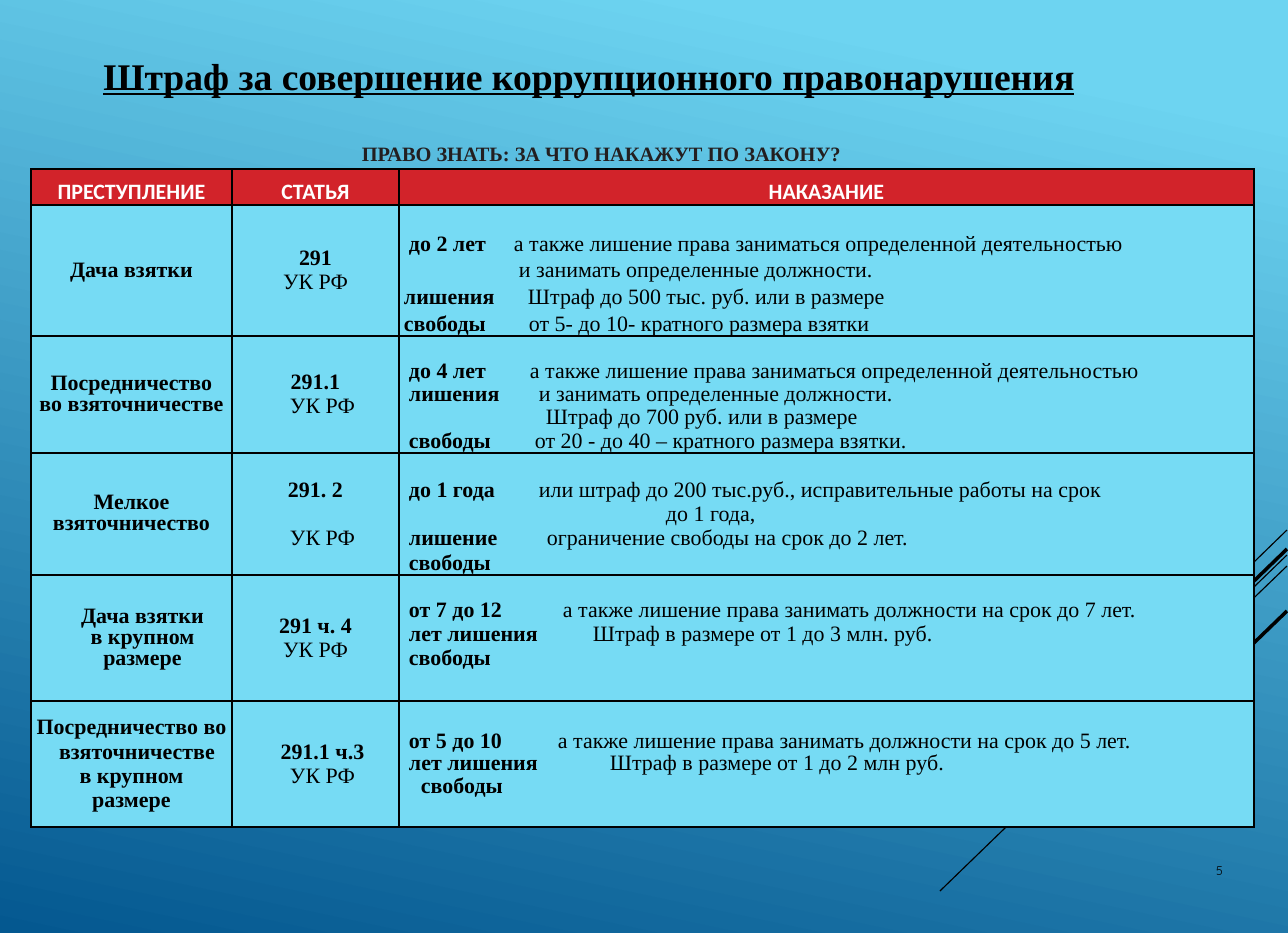
from dataclasses import dataclass
from typing import Any

from lxml.etree import SubElement
from pptx import Presentation
from pptx.dml.color import RGBColor
from pptx.enum.shapes import MSO_CONNECTOR
from pptx.enum.text import MSO_ANCHOR as Anchor, PP_ALIGN as Align
from pptx.oxml.ns import qn
from pptx.util import Emu, Pt

PX = 914400 / 112.8


def px(length: int) -> Emu:
    return Emu(round(length * PX))


@dataclass(frozen=True)
class Theme:
    serif: str = "Times New Roman"
    sans: str = "Calibri"
    number_font: str = "Quicksand"
    ink: str = "000000"
    subtitle: str = "231F20"
    white: str = "FFFFFF"
    header: str = "D2232A"
    cell: str = "76DBF4"
    sky_light: str = "6DD4F1"
    sky_dark: str = "045890"
    title_size: int = 24
    subtitle_size: int = 13
    table_size: int = 14
    number_size: int = 8
    border: float = 1


THEME = Theme()


@dataclass(frozen=True)
class Line:
    """Bold term and plain detail; indent, gap before and tab stops are in px."""
    term: str = ""
    detail: str = ""
    indent: int = 0
    before: int = 0
    stops: tuple[int, ...] = ()


@dataclass(frozen=True)
class Block:
    lines: tuple[Line, ...]
    spacing: float = 1.0
    anchor: Anchor = Anchor.MIDDLE


@dataclass(frozen=True)
class Ray:
    start: tuple[int, int]
    end: tuple[int, int]
    width: float


def centred(*lines: Line, spacing: float = 1.0) -> Block:
    return Block(lines, spacing)


def article(number: str, number_indent: int = 0, code_indent: int = 0, gap: int = 0) -> Block:
    return centred(Line(number, indent=number_indent),
                   Line(detail="УК РФ", indent=code_indent, before=gap))


def punishment(*rows: tuple[str, str, int, int], spacing: float = 1.0,
               anchor: Anchor = Anchor.BOTTOM) -> Block:
    """Each row holds term, detail and the px offsets of both from the cell edge."""
    lines = []
    for term, detail, term_at, detail_at in rows:
        stops = (term_at,) * bool(term) + (detail_at,) * bool(detail)
        lines.append(Line(term, detail, stops=stops))
    return Block(tuple(lines), spacing, anchor)


RAYS = (
    Ray((1287, 530), (1181, 633), 0.75),
    Ray((1287, 555), (940, 891), 0.75),
    Ray((1287, 566), (1066, 779), 0.75),
    Ray((1287, 549), (1084, 746), 2.25),
    Ray((1287, 611), (1139, 754), 2.25),
)
HEADERS = ("ПРЕСТУПЛЕНИЕ", "СТАТЬЯ", "НАКАЗАНИЕ")
COLUMN_WIDTHS = (201, 167, 855)
ROW_HEIGHTS = (36, 131, 117, 122, 126, 126)
TOP_MARGIN = 23
OFFENCES = (
    (centred(Line("Дача взятки")), article("291"), punishment(
        ("до 2 лет", "а также лишение права заниматься определенной деятельностью", 10, 115),
        ("", "и занимать определенные должности.", 10, 120),
        ("лишения", "Штраф до 500 тыс. руб. или в размере", 5, 129),
        ("свободы", "от 5- до 10- кратного размера взятки", 5, 130), spacing=1.1)),
    (centred(Line("Посредничество"), Line("во взяточничестве"), spacing=0.87),
     article("291.1", code_indent=14), punishment(
        ("до 4 лет", "а также лишение права заниматься определенной деятельностью", 10, 131),
        ("лишения", "и занимать определенные должности.", 10, 140),
        ("", "Штраф до 700 руб. или в размере", 10, 147),
        ("свободы", "от 20 - до 40 – кратного размера взятки.", 10, 136), spacing=0.96)),
    (centred(Line("Мелкое взяточничество"), spacing=0.87),
     article("291. 2", code_indent=14, gap=24), punishment(
        ("до 1 года", "или штраф до 200 тыс.руб., исправительные работы на срок", 10, 140),
        ("", "до 1 года,", 10, 267),
        ("лишение", "ограничение свободы на срок до 2 лет.", 10, 148),
        ("свободы", "", 10, 0))),
    (centred(*(Line(text, indent=22) for text in ("Дача взятки", "в крупном", "размере")), spacing=0.87),
     article("291 ч. 4"), punishment(
        ("от 7 до 12", "а также лишение права занимать должности на срок до 7 лет.", 10, 164),
        ("лет лишения", "Штраф в размере от 1 до 3 млн. руб.", 10, 194),
        ("свободы", "", 10, 0), anchor=Anchor.TOP)),
    (centred(Line("Посредничество во"), Line("взяточничестве", indent=11), Line("в крупном"), Line("размере")),
     article("291.1 ч.3", 14, 14), punishment(
        ("от 5 до 10", "а также лишение права занимать должности на срок до 5 лет.", 10, 159),
        ("лет лишения", "Штраф в размере от 1 до 2 млн руб.", 10, 211),
        ("свободы", "", 22, 0), spacing=0.93, anchor=Anchor.MIDDLE)),
)


def set_all(target: Any, values: dict[str, Any]) -> None:
    for name, value in values.items():
        setattr(target, name, value)


def add_span(para: Any, text: str, size: int, font: str = THEME.serif, color: str = THEME.ink,
             **formats: Any) -> None:
    span = para.add_run()
    span.text = text
    set_all(span.font, {"name": font, "size": Pt(size), "bold": False, **formats})
    span.font.color.rgb = RGBColor.from_string(color)


def place(box: Any, left: int, top: int, width: int, height: int) -> None:
    set_all(box, {"left": px(left), "top": px(top), "width": px(width), "height": px(height)})


def paint_background(page: Any) -> None:
    fill = page.background.fill
    fill.gradient()
    fill.gradient_angle = 258
    for stop, position, color in zip(fill.gradient_stops, (0.1, 1), (THEME.sky_light, THEME.sky_dark)):
        stop.position = position
        stop.color.rgb = RGBColor.from_string(color)


def add_ray(page: Any, ray: Ray) -> None:
    line = page.shapes.add_connector(MSO_CONNECTOR.STRAIGHT, *map(px, ray.start + ray.end))
    line.line.color.rgb = RGBColor.from_string(THEME.ink)
    line.line.width = Pt(ray.width)
    SubElement(line._element.spPr, qn("a:effectLst"))


def style_cell(cell: Any, color: str, anchor: Anchor) -> None:
    top = TOP_MARGIN if anchor == Anchor.TOP else 0
    set_all(cell, {"margin_left": 0, "margin_right": 0, "margin_top": px(top), "margin_bottom": 0,
                   "vertical_anchor": anchor})
    properties = cell._tc.get_or_add_tcPr()
    for side in ("lnL", "lnR", "lnT", "lnB"):
        edge = SubElement(properties, qn(f"a:{side}"), w=str(Pt(THEME.border)))
        SubElement(SubElement(edge, qn("a:solidFill")), qn("a:srgbClr"), val=THEME.ink)
    cell.fill.solid()
    cell.fill.fore_color.rgb = RGBColor.from_string(color)


def write_line(para: Any, line: Line, spacing: float) -> None:
    set_all(para, {"alignment": Align.LEFT if line.stops else Align.CENTER,
                   "line_spacing": spacing, "space_before": px(line.before)})
    properties = para._p.get_or_add_pPr()
    properties.set("marL", str(px(line.indent)))
    if line.stops:
        tabs = SubElement(properties, qn("a:tabLst"))
        for stop in line.stops:
            SubElement(tabs, qn("a:tab"), pos=str(px(stop)), algn="l")
    lead = "\t" if line.stops else ""
    for text, bold in ((line.term, True), (line.detail, False)):
        if text:
            add_span(para, lead + text, THEME.table_size, bold=bold)


def fill_cell(cell: Any, block: Block) -> None:
    style_cell(cell, THEME.cell, block.anchor)
    frame = cell.text_frame
    for index, line in enumerate(block.lines):
        write_line(frame.add_paragraph() if index else frame.paragraphs[0], line, block.spacing)


def add_offence_table(page: Any) -> None:
    table = page.shapes.add_table(len(ROW_HEIGHTS), len(COLUMN_WIDTHS), px(31), px(169),
                                  px(sum(COLUMN_WIDTHS)), px(sum(ROW_HEIGHTS))).table
    table.horz_banding = False
    for column, width in zip(table.columns, COLUMN_WIDTHS):
        column.width = px(width)
    for row, height in zip(table.rows, ROW_HEIGHTS):
        row.height = px(height)
    for column, text in enumerate(HEADERS):
        cell = table.cell(0, column)
        style_cell(cell, THEME.header, Anchor.BOTTOM)
        para = cell.text_frame.paragraphs[0]
        para.alignment = Align.CENTER
        add_span(para, text, THEME.table_size, THEME.sans, THEME.white, bold=True)
    for row, blocks in enumerate(OFFENCES, 1):
        for column, block in enumerate(blocks):
            fill_cell(table.cell(row, column), block)


def main() -> None:
    deck = Presentation()
    deck.slide_width, deck.slide_height = px(1288), px(933)
    page = deck.slides.add_slide(deck.slide_layouts[5])
    paint_background(page)
    for ray in RAYS:
        add_ray(page, ray)

    title = page.shapes.title
    place(title, 92, 47, 1138, 56)
    title.text_frame.vertical_anchor = Anchor.MIDDLE
    heading = title.text_frame.paragraphs[0]
    heading.alignment = Align.LEFT
    add_span(heading, "Штраф за совершение коррупционного правонарушения", THEME.title_size,
             bold=True, underline=True)

    subtitle = page.shapes.add_textbox(px(341), px(141), px(520), px(28)).text_frame
    set_all(subtitle, {"margin_left": 0, "margin_right": 0, "margin_top": 0, "margin_bottom": 0,
                       "word_wrap": False})
    subtitle.paragraphs[0].alignment = Align.CENTER
    add_span(subtitle.paragraphs[0], "ПРАВО ЗНАТЬ: ЗА ЧТО НАКАЖУТ ПО ЗАКОНУ?", THEME.subtitle_size,
             color=THEME.subtitle, bold=True)

    add_offence_table(page)
    number = page.shapes.add_textbox(px(1205), px(857), px(82), px(65)).text_frame
    number.word_wrap = True
    add_span(number.paragraphs[0], "5", THEME.number_size, THEME.number_font)
    deck.save("out.pptx")


if __name__ == "__main__":
    main()
